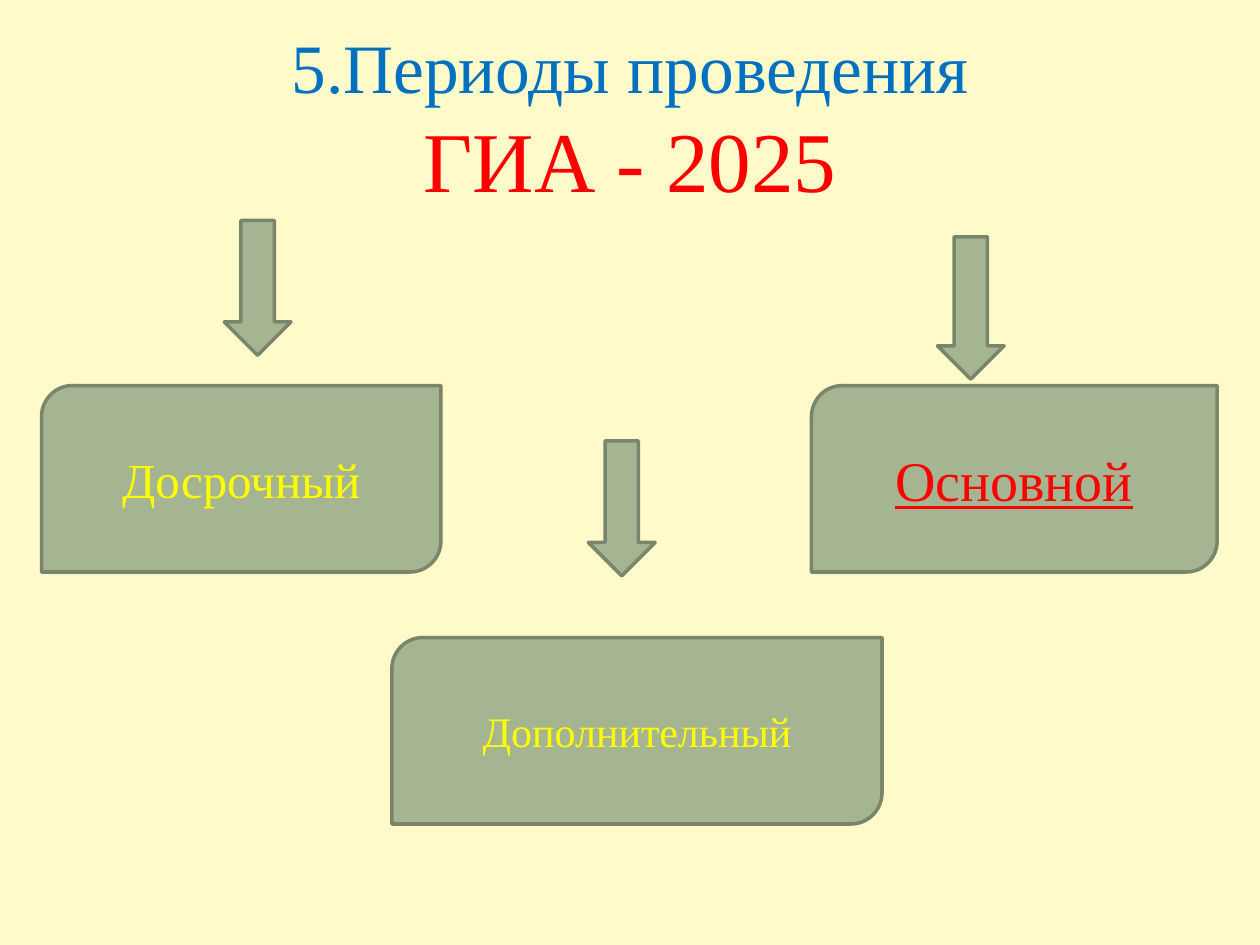
"""Build a slide showing the three exam periods under a two-line title."""
from typing import NamedTuple

from pptx import Presentation
from pptx import util as u
from pptx.dml.color import RGBColor
from pptx.enum import shapes, text

FONT = "Times New Roman"
CREAM = RGBColor(0xFE, 0xFA, 0xC9)
SAGE = RGBColor(0xA5, 0xB5, 0x92)
DARK_SAGE = RGBColor(0x7A, 0x86, 0x6C)
BLUE = RGBColor(0x00, 0x70, 0xC0)
RED = RGBColor(0xFF, 0x00, 0x00)
YELLOW = RGBColor(0xFF, 0xFF, 0x00)

ARROW_WIDTH = 0.53
BOX_HEIGHT = 1.48


class Label(NamedTuple):
    wording: str
    size: float
    color: RGBColor
    underline: bool = False


class Arrow(NamedTuple):
    left: float
    top: float
    height: float


class Period(NamedTuple):
    left: float
    top: float
    width: float
    label: Label
    arrow: Arrow


TITLE = (Label("5.Периоды проведения", 39.6, BLUE), Label("ГИА - 2025", 48.6, RED))
PERIODS = (
    Period(0.33, 3.06, 3.17, Label("Досрочный", 28, YELLOW), Arrow(1.78, 1.75, 1.07)),
    Period(6.44, 3.06, 3.22, Label("Основной", 32, RED, True), Arrow(7.44, 1.88, 1.13)),
    Period(3.11, 5.06, 3.89, Label("Дополнительный", 24, YELLOW), Arrow(4.67, 3.5, 1.07)),
)


def write_labels(shape, labels: tuple[Label, ...]) -> None:
    """Write labels as centred lines of one paragraph."""
    frame = shape.text_frame
    frame.word_wrap = True
    frame.vertical_anchor = text.MSO_ANCHOR.MIDDLE
    paragraph = frame.paragraphs[0]
    paragraph.alignment = text.PP_ALIGN.CENTER
    for index, label in enumerate(labels):
        if index:
            paragraph.add_line_break()
        run = paragraph.add_run()
        run.text = label.wording
        run.font.name = FONT
        run.font.size = u.Pt(label.size)
        run.font.color.rgb = label.color
        if label.underline:
            run.font.underline = True


def add_sage_shape(slide, kind, left: float, top: float, width: float, height: float):
    """Add a green outlined preset shape, measured in inches."""
    shape = slide.shapes.add_shape(
        kind, u.Inches(left), u.Inches(top), u.Inches(width), u.Inches(height)
    )
    shape.shadow.inherit = False
    shape.fill.solid()
    shape.fill.fore_color.rgb = SAGE
    shape.line.color.rgb = DARK_SAGE
    shape.line.width = u.Pt(2)
    return shape


def add_period(slide, period: Period) -> None:
    """Draw the arrow and the labelled box of a period."""
    arrow = period.arrow
    add_sage_shape(
        slide, shapes.MSO_SHAPE.DOWN_ARROW, arrow.left, arrow.top, ARROW_WIDTH, arrow.height
    )
    box = add_sage_shape(
        slide, shapes.MSO_SHAPE.ROUND_2_DIAG_RECTANGLE,
        period.left, period.top, period.width, BOX_HEIGHT,
    )
    write_labels(box, (period.label,))


def main() -> None:
    """Create and save the presentation."""
    presentation = Presentation()
    presentation.slide_width = u.Inches(10)
    presentation.slide_height = u.Inches(7.5)
    slide = presentation.slides.add_slide(presentation.slide_layouts[6])
    slide.background.fill.solid()
    slide.background.fill.fore_color.rgb = CREAM

    title = slide.shapes.add_textbox(u.Inches(0.5), u.Inches(0.3), u.Inches(9), u.Inches(1.25))
    write_labels(title, TITLE)
    for period in PERIODS:
        add_period(slide, period)
    presentation.save("out.pptx")


if __name__ == "__main__":
    main()
